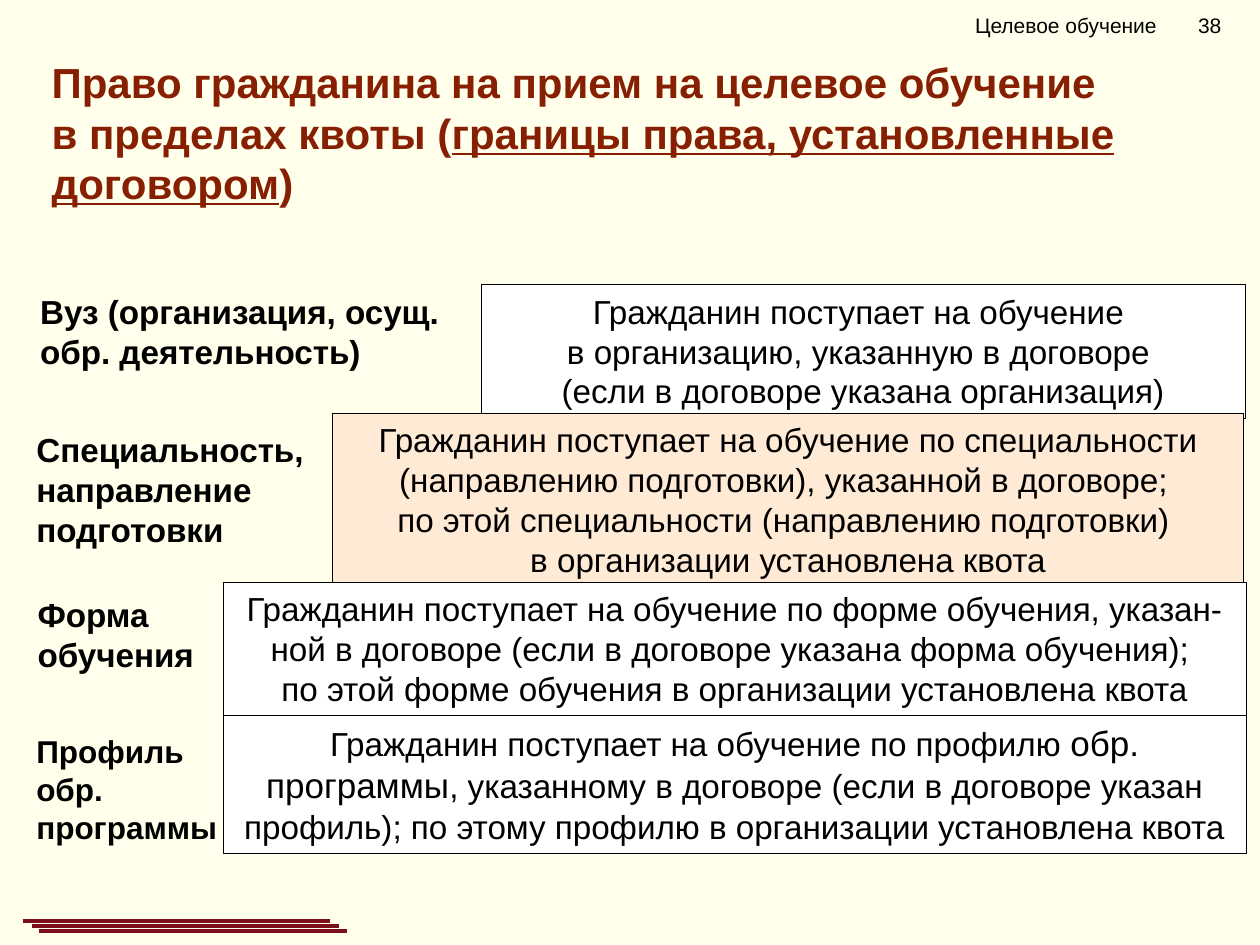
"""Builds the slide on the limits of the right to targeted admission."""
import pptx
import pptx.dml.color
import pptx.enum.shapes
import pptx.enum.text
import pptx.oxml
import pptx.oxml.ns
import pptx.util
from lxml import etree

PX = 9144
COLORS = {
    "background": "FFFFEB",
    "title": "871F03",
    "text": "000000",
    "white": "FFFFFF",
    "peach": "FFEAD5",
    "rule": "7B0F19",
}
LEFT = pptx.enum.text.PP_ALIGN.LEFT
CENTER = pptx.enum.text.PP_ALIGN.CENTER
TOP = pptx.enum.text.MSO_ANCHOR.TOP
MIDDLE = pptx.enum.text.MSO_ANCHOR.MIDDLE


def color(name):
    return pptx.dml.color.RGBColor.from_string(COLORS[name])


def write(shape, paragraphs, size, bold=False, align=LEFT, anchor=TOP, ink="text"):
    frame = shape.text_frame
    frame.word_wrap = True
    frame.auto_size = pptx.enum.text.MSO_AUTO_SIZE.NONE
    frame.vertical_anchor = anchor
    frame.text = "\n".join("" for _ in paragraphs)
    for paragraph, pieces in zip(frame.paragraphs, paragraphs):
        paragraph.alignment = align
        paragraph.space_before = pptx.util.Pt(0)
        for piece in pieces:
            run = paragraph.add_run()
            run.text = piece
            run.font.name = "Arial"
            run.font.size = pptx.util.Pt(size)
            run.font.bold = bold
            run.font.color.rgb = color(ink)
    return frame


presentation = pptx.Presentation()
presentation.slide_width = 1000 * PX
presentation.slide_height = 750 * PX
slide = presentation.slides.add_slide(presentation.slide_layouts[5])
slide.background.fill.solid()
slide.background.fill.fore_color.rgb = color("background")

title = slide.shapes.title
title.left, title.top, title.width, title.height = 31 * PX, 40 * PX, 942 * PX, 131 * PX
title_lines = [
    ["Право гражданина на прием на целевое обучение"],
    ["в пределах квоты (", "границы права, установленные договором", ")"],
]
title_frame = write(title, title_lines, 24, bold=True, ink="title")
title_frame.paragraphs[1].runs[1].font.underline = True

header = slide.shapes.add_textbox(764 * PX, 0, 236 * PX, 40 * PX)
header_frame = write(header, [["Целевое обучение\t38"]], 12, anchor=MIDDLE)
properties = header_frame.paragraphs[0]._p.get_or_add_pPr()
tab_list = etree.SubElement(properties, pptx.oxml.ns.qn("a:tabLst"))
etree.SubElement(tab_list, pptx.oxml.ns.qn("a:tab"), pos=str(177 * PX), algn="l")

labels = [
    (22, 226, 375, 74, 19, "Вуз (организация, осущ. обр. деятельность)"),
    (19, 336, 245, 106, 19, "Специальность, направление подготовки"),
    (20, 467, 188, 74, 19, "Форма обучения"),
    (19, 576, 174, 101, 18, "Профиль обр. программы"),
]
for left, top, width, height, size, text in labels:
    label = slide.shapes.add_textbox(left * PX, top * PX, width * PX, height * PX)
    write(label, [[text]], size, bold=True)

limits = [
    (382, 226, 606, 106, "white", [
        ["Гражданин поступает на обучение "],
        ["в организацию, указанную в договоре "],
        ["(если в договоре указана организация)"],
    ]),
    (264, 328, 723, 138, "peach", [
        ["Гражданин поступает на обучение по специальности "
         "(направлению подготовки), указанной в договоре; "],
        ["по этой специальности (направлению подготовки) "],
        ["в организации установлена квота"],
    ]),
    (177, 462, 812, 106, "white", [
        ["Гражданин поступает на обучение по форме обучения, указан-ной "
         "в договоре (если в договоре указана форма обучения); "],
        ["по этой форме обучения в организации установлена квота"],
    ]),
    (177, 568, 812, 109, "white", [
        ["Гражданин поступает на обучение по профилю ",
         "обр. программы",
         ", указанному в договоре (если в договоре указан профиль); "
         "по этому профилю в организации установлена квота"],
    ]),
]
for left, top, width, height, fill, paragraphs in limits:
    box = slide.shapes.add_shape(
        pptx.enum.shapes.MSO_SHAPE.RECTANGLE,
        left * PX, top * PX, width * PX, height * PX)
    box.shadow.inherit = False
    box.fill.solid()
    box.fill.fore_color.rgb = color(fill)
    box.line.color.rgb = color("text")
    box.line.width = pptx.util.Pt(0.25)
    box_frame = write(box, paragraphs, 19, align=CENTER)
box_frame.paragraphs[0].runs[1].font.size = pptx.util.Pt(20)

for left, top in [(18, 731), (25, 735), (31, 739)]:
    rule = slide.shapes.add_connector(
        pptx.enum.shapes.MSO_CONNECTOR.STRAIGHT,
        left * PX, top * PX, (left + 244) * PX, top * PX)
    rule.line.color.rgb = color("rule")
    rule.line.width = pptx.util.Pt(2.25)
    etree.SubElement(rule._element.spPr, pptx.oxml.ns.qn("a:effectLst"))

presentation.save("out.pptx")
